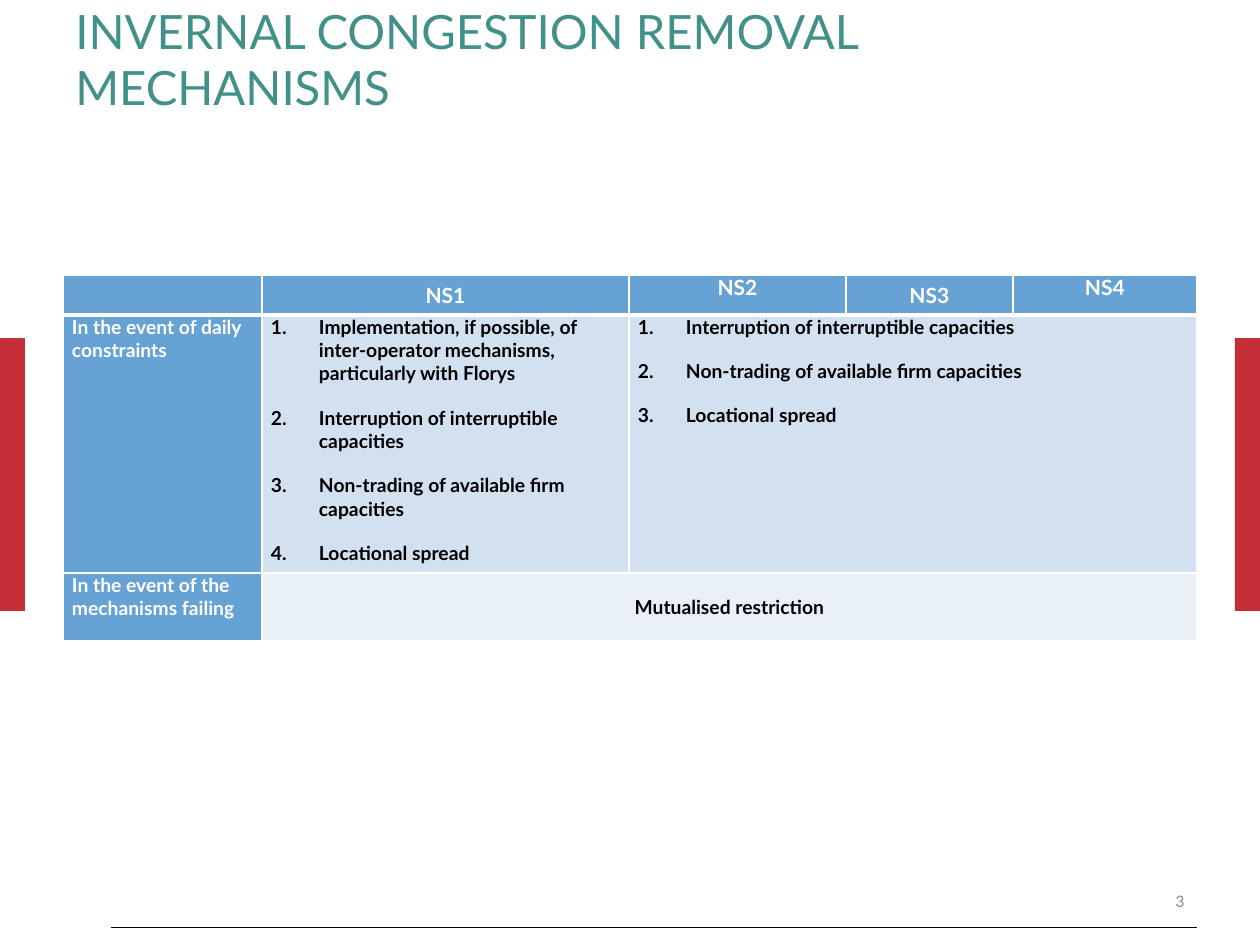
from lxml import etree
from pptx import Presentation
from pptx.dml.color import RGBColor
from pptx.enum.shapes import MSO_CONNECTOR, MSO_SHAPE
from pptx.enum.text import MSO_ANCHOR, PP_ALIGN
from pptx.oxml.ns import qn
from pptx.util import Pt

PX = 914400 // 126
FONT = "Lato"
LEFT, CENTER, RIGHT = PP_ALIGN.LEFT, PP_ALIGN.CENTER, PP_ALIGN.RIGHT
TOP, MIDDLE = MSO_ANCHOR.TOP, MSO_ANCHOR.MIDDLE
RECT, STRAIGHT = MSO_SHAPE.RECTANGLE, MSO_CONNECTOR.STRAIGHT

WHITE = RGBColor(0xFF, 0xFF, 0xFF)
BLACK = RGBColor(0, 0, 0)
RED = RGBColor(0xC3, 0x2E, 0x37)
TEAL = RGBColor(0x42, 0x91, 0x88)
GREY = RGBColor(0x8C, 0x8C, 0x8C)
BLUE = RGBColor(0x66, 0xA2, 0xD3)
PALE = RGBColor(0xD3, 0xE0, 0xEF)
LIGHT = RGBColor(0xEA, 0xF0, 0xF7)

COLS = [199, 367, 217, 167, 184]
ROWS = [40, 258, 68]
SHARED = [
    "Interruption of interruptible capacities",
    "Non-trading of available firm capacities",
    "Locational spread",
]
FIRST = ["Implementation, if possible, of inter-operator mechanisms, "
         "particularly with Florys"]


def px(*vals):
    return [val * PX for val in vals]


def style(para, size, color, bold=False, align=LEFT):
    para.alignment = align
    font = para.font
    font.name, font.size, font.bold = FONT, Pt(size), bold
    font.color.rgb = color


def add_bar(slide, left):
    bar = slide.shapes.add_shape(RECT, *px(left, 338, 25, 273))
    bar.shadow.inherit = False
    bar.fill.solid()
    bar.fill.fore_color.rgb = RED
    bar.line.fill.background()


def add_rule(slide):
    rule = slide.shapes.add_connector(STRAIGHT, *px(111, 927, 1197, 927))
    rule.line.color.rgb = BLACK
    rule.line.width = Pt(0.25)
    etree.SubElement(rule._element.spPr, qn("a:effectLst"))


def add_text(slide, box, text, size, color, align=LEFT):
    frame = slide.shapes.add_textbox(*px(*box)).text_frame
    frame.word_wrap = True
    frame.vertical_anchor = MIDDLE
    frame.text = text
    style(frame.paragraphs[0], size, color, align=align)
    return frame


def set_edges(cell, **widths):
    props = cell._tc.get_or_add_tcPr()
    for side in "LRTB":
        edge = etree.SubElement(props, qn(f"a:ln{side}"),
                                w=str(Pt(widths.get(side, 1))))
        fill = etree.SubElement(edge, qn("a:solidFill"))
        etree.SubElement(fill, qn("a:srgbClr"), val=str(WHITE))


def set_number(para):
    props = para._p.get_or_add_pPr()
    props.set("marL", str(48 * PX))
    props.set("indent", str(-48 * PX))
    etree.SubElement(props, qn("a:buFont"), typeface="+mj-lt")
    etree.SubElement(props, qn("a:buAutoNum"), type="arabicPeriod")


def fill_cell(cell, lines, size=11, color=WHITE, align=LEFT,
              anchor=TOP, listed=False):
    cell.vertical_anchor = anchor
    frame = cell.text_frame
    frame.text = "\n".join(lines)
    for i, para in enumerate(frame.paragraphs):
        para.space_before = Pt(6 if i else 0)
        para.space_after = Pt(6)
        if listed:
            set_number(para)
        style(para, size, color, True, align)


def add_grid(slide):
    box = px(63, 275, sum(COLS), sum(ROWS))
    grid = slide.shapes.add_table(len(ROWS), len(COLS), *box).table
    grid.first_row = grid.horz_banding = False
    for col, width in zip(grid.columns, COLS):
        col.width = width * PX
    for row, height in zip(grid.rows, ROWS):
        row.height = height * PX

    # Fills, margins and borders
    for r, body in enumerate([BLUE, PALE, LIGHT]):
        for c in range(len(COLS)):
            cell = grid.cell(r, c)
            cell.margin_left = cell.margin_right = 9 * PX
            cell.margin_top = cell.margin_bottom = 0
            set_edges(cell, B=1 if r else 3, T=3 if r == 1 else 1)
            cell.fill.solid()
            cell.fill.fore_color.rgb = body if c else BLUE
    grid.cell(1, 2).merge(grid.cell(1, 4))
    grid.cell(2, 1).merge(grid.cell(2, 4))

    # Header row
    for c, anchor in enumerate([MIDDLE, TOP, MIDDLE, TOP], 1):
        fill_cell(grid.cell(0, c), [f"NS{c}"], 12, align=CENTER, anchor=anchor)

    # Body rows
    fill_cell(grid.cell(1, 0), ["In the event of daily constraints"])
    fill_cell(grid.cell(1, 1), FIRST + SHARED, color=BLACK, listed=True)
    fill_cell(grid.cell(1, 2), SHARED, color=BLACK, listed=True)
    fill_cell(grid.cell(2, 0), ["In the event of the mechanisms failing"])
    fill_cell(grid.cell(2, 1), ["Mutualised restriction"], color=BLACK,
              align=CENTER, anchor=MIDDLE)


def main():
    deck = Presentation()
    deck.slide_width, deck.slide_height = px(1260, 945)
    slide = deck.slides.add_slide(deck.slide_layouts[6])

    # Side bars and footer rule
    for left in (1235, 0):
        add_bar(slide, left)
    add_rule(slide)

    add_grid(slide)

    # Page number and title
    add_text(slide, (1126, 876, 71, 50), "3", 9, GREY, RIGHT)
    title = add_text(slide, (63, 0, 1134, 117),
                     "INVERNAL CONGESTION REMOVAL MECHANISMS", 27, TEAL)
    title.margin_right = 30 * PX
    deck.save("out.pptx")


if __name__ == "__main__":
    main()
